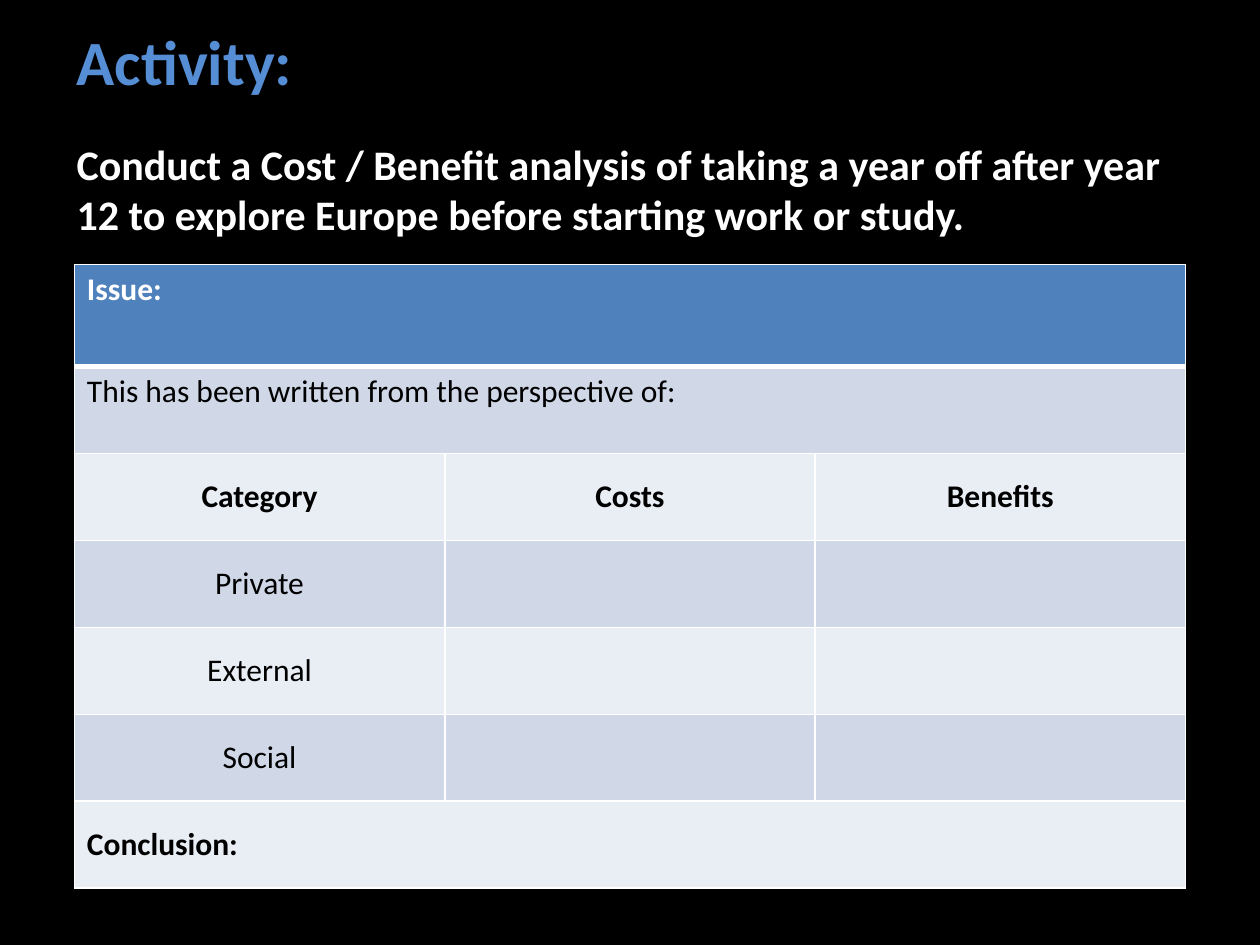
from dataclasses import dataclass

from lxml.etree import SubElement
from pptx import Presentation
from pptx.dml.color import RGBColor
from pptx.enum.text import MSO_ANCHOR, MSO_AUTO_SIZE, PP_ALIGN
from pptx.oxml.ns import qn
from pptx.util import Inches, Pt

COLORS = {
    "background": "000000",
    "title": "558ED5",
    "white": "FFFFFF",
    "black": "000000",
    "header": "4F81BD",
    "dark_band": "D0D8E8",
    "light_band": "E9EDF4",
}
COLUMN_COUNT = 3
COLUMN_WIDTH = 2.94
HEADER_HEIGHT = 0.81
ROW_HEIGHT = 0.69


@dataclass
class Row:
    texts: tuple[str, ...]
    bold: bool = False
    merged: bool = False
    anchor: MSO_ANCHOR = MSO_ANCHOR.MIDDLE


ROWS = [
    Row(("Issue:",), bold=True, merged=True, anchor=MSO_ANCHOR.TOP),
    Row(("This has been written from the perspective of:",), merged=True, anchor=MSO_ANCHOR.TOP),
    Row(("Category", "Costs", "Benefits"), bold=True),
    Row(("Private",)),
    Row(("External",)),
    Row(("Social",)),
    Row(("Conclusion:",), bold=True, merged=True),
]


def color(name: str) -> RGBColor:
    return RGBColor.from_string(COLORS[name])


def write(frame, text: str, size: int, color_name: str, bold: bool, align=PP_ALIGN.LEFT) -> None:
    paragraph = frame.paragraphs[0]
    paragraph.alignment = align
    span = paragraph.add_run()
    span.text = text
    formats = {"name": "Calibri", "size": Pt(size), "bold": bold}
    for name, value in formats.items():
        setattr(span.font, name, value)
    span.font.color.rgb = color(color_name)


def format_frame(frame) -> None:
    formats = {
        "word_wrap": True,
        "auto_size": MSO_AUTO_SIZE.NONE,
        "vertical_anchor": MSO_ANCHOR.TOP,
    }
    for name, value in formats.items():
        setattr(frame, name, value)


def add_borders(cell, top: int, bottom: int) -> None:
    properties = cell._tc.get_or_add_tcPr()
    for side, width in {"L": 1, "R": 1, "T": top, "B": bottom}.items():
        line = SubElement(properties, qn(f"a:ln{side}"), w=str(Pt(width)))
        fill = SubElement(line, qn("a:solidFill"))
        SubElement(fill, qn("a:srgbClr"), val=COLORS["white"])


def add_heading(page) -> None:
    title = page.shapes.title
    title.left, title.top = Inches(0.51), Inches(0.13)
    title.width, title.height = Inches(8.98), Inches(0.75)
    format_frame(title.text_frame)
    write(title.text_frame, "Activity:", 36, "title", True)

    task = page.shapes.add_textbox(Inches(0.51), Inches(1.05), Inches(8.98), Inches(0.9))
    format_frame(task.text_frame)
    write(
        task.text_frame,
        "Conduct a Cost / Benefit analysis of taking a year off after year 12 "
        "to explore Europe before starting work or study.",
        24, "white", True,
    )


def fill_row(table, index: int, row: Row) -> None:
    is_header = index == 0
    band = "header" if is_header else "dark_band" if index % 2 else "light_band"
    table.rows[index].height = Inches(HEADER_HEIGHT if is_header else ROW_HEIGHT)
    for cell in table.rows[index].cells:
        add_borders(cell, top=3 if index == 1 else 1, bottom=3 if is_header else 1)
        cell.fill.solid()
        cell.fill.fore_color.rgb = color(band)
        cell.vertical_anchor = row.anchor
    if row.merged:
        table.cell(index, 0).merge(table.cell(index, COLUMN_COUNT - 1))
    align = PP_ALIGN.LEFT if row.merged else PP_ALIGN.CENTER
    for column, text in enumerate(row.texts):
        frame = table.cell(index, column).text_frame
        write(frame, text, 18, "white" if is_header else "black", row.bold, align)


def add_analysis_table(page) -> None:
    height = HEADER_HEIGHT + ROW_HEIGHT * (len(ROWS) - 1)
    table = page.shapes.add_table(
        len(ROWS), COLUMN_COUNT, Inches(0.59), Inches(2.1),
        Inches(COLUMN_WIDTH * COLUMN_COUNT), Inches(height),
    ).table
    for column in table.columns:
        column.width = Inches(COLUMN_WIDTH)
    for index, row in enumerate(ROWS):
        fill_row(table, index, row)


def main() -> None:
    deck = Presentation()
    deck.slide_width, deck.slide_height = Inches(10), Inches(7.5)
    page = deck.slides.add_slide(deck.slide_layouts[5])
    page.background.fill.solid()
    page.background.fill.fore_color.rgb = color("background")
    add_heading(page)
    add_analysis_table(page)
    deck.save("out.pptx")


if __name__ == "__main__":
    main()
